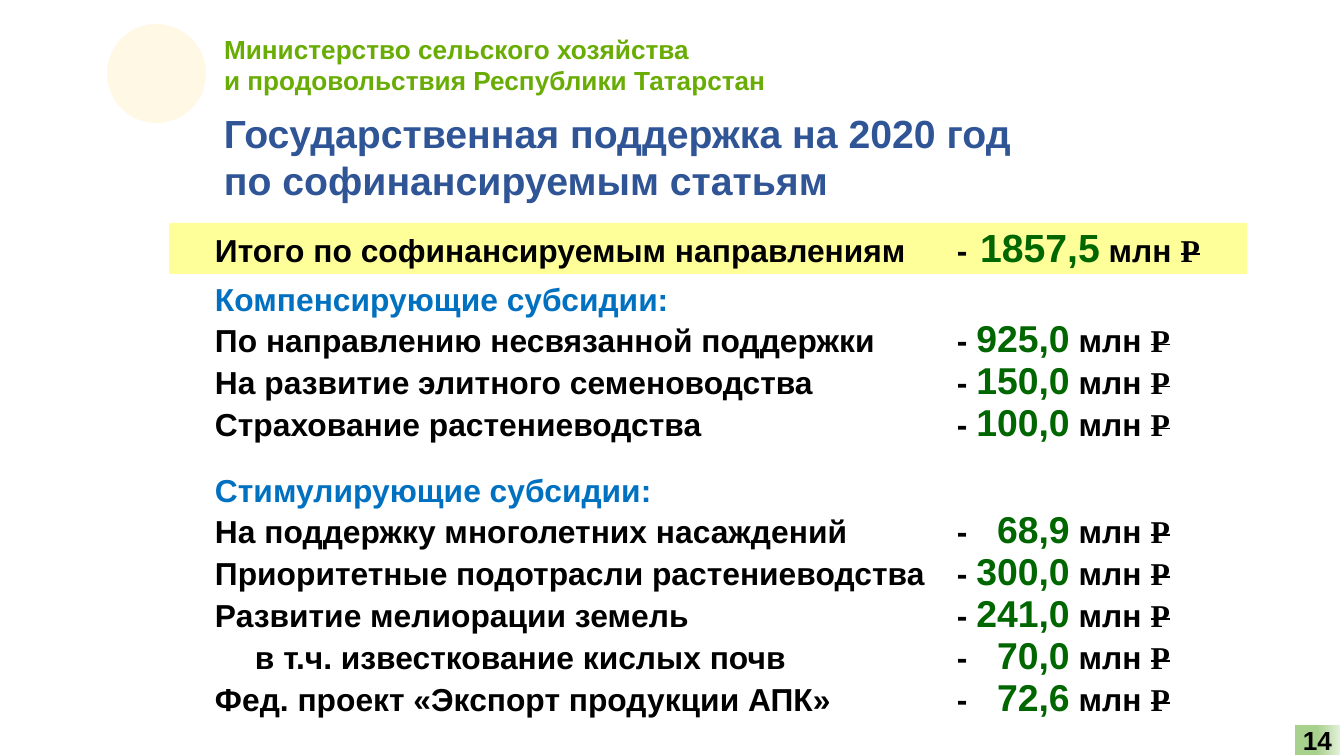
from dataclasses import dataclass

from lxml import etree
from pptx import Presentation
from pptx.dml.color import RGBColor
from pptx.enum.shapes import MSO_SHAPE
from pptx.enum.text import MSO_ANCHOR, MSO_AUTO_SIZE, PP_ALIGN
from pptx.oxml.ns import qn
from pptx.util import Emu, Pt

EMU_PER_PX = 914400 / 134.4
TITLE_ONLY = 5
OVAL, BAR, BADGE = MSO_SHAPE.OVAL, MSO_SHAPE.RECTANGLE, MSO_SHAPE.ROUNDED_RECTANGLE
TOP, MIDDLE = MSO_ANCHOR.TOP, MSO_ANCHOR.MIDDLE
LEFT, CENTER = PP_ALIGN.LEFT, PP_ALIGN.CENTER
NO_AUTOFIT = MSO_AUTO_SIZE.NONE


@dataclass(frozen=True)
class Theme:
    font: str = "Arial"
    rouble_font: str = "Times New Roman"
    ministry: str = "68AC04"
    title: str = "2F5597"
    heading: str = "0070C0"
    text: str = "000000"
    amount: str = "006600"
    emblem: str = "FFF8E5"
    total_bar: str = "FFFF99"
    badge_dark: str = "A9D18E"
    badge_light: str = "E2F0D9"
    small_size: float = 14
    text_size: float = 17
    amount_size: float = 20
    title_size: float = 21


THEME = Theme()

DASH_TAB, AMOUNT_TAB, TOTAL_TAB, SUB_ITEM_TAB = 742, 955, 985, 40

MINISTRY = ["Министерство сельского хозяйства",
            "и продовольствия Республики Татарстан"]
TITLE = ["Государственная поддержка на 2020 год",
         "по софинансируемым статьям"]
TOTAL = ("Итого по софинансируемым направлениям", "1857,5")
SUBSIDIES = [
    ("Компенсирующие субсидии:", [
        ("По направлению несвязанной поддержки", "925,0"),
        ("На развитие элитного семеноводства", "150,0"),
        ("Страхование растениеводства", "100,0"),
    ]),
    ("Стимулирующие субсидии:", [
        ("На поддержку многолетних насаждений", "68,9"),
        ("Приоритетные подотрасли растениеводства", "300,0"),
        ("Развитие мелиорации земель", "241,0"),
        ("\tв т.ч. известкование кислых почв", "70,0"),
        ("Фед. проект «Экспорт продукции АПК»", "72,6"),
    ]),
]


def px(length):
    return Emu(round(length * EMU_PER_PX))


def apply(target, values):
    for name, value in values.items():
        setattr(target, name, value)


def set_frame(frame, insets=(9, 0, 9, 0), anchor=TOP, wrap=True):
    """Format a text frame; insets run left, top, right, bottom."""
    left, top, right, bottom = map(px, insets)
    apply(frame, {"margin_left": left, "margin_top": top, "margin_right": right,
                  "margin_bottom": bottom, "vertical_anchor": anchor,
                  "word_wrap": wrap, "auto_size": NO_AUTOFIT})
    return frame


def next_paragraph(frame):
    first = frame.paragraphs[0]
    return first if not first.runs else frame.add_paragraph()


def add_run(paragraph, text, color, size, font=THEME.font):
    run = paragraph.add_run()
    run.text = text
    apply(run.font, {"name": font, "size": Pt(size), "bold": True})
    run.font.color.rgb = RGBColor.from_string(color)
    return run


def add_lines(frame, lines, color, size, **spacing):
    for line in lines:
        paragraph = next_paragraph(frame)
        apply(paragraph, {"alignment": LEFT, **spacing})
        add_run(paragraph, line, color, size)


def add_tabs(paragraph, stops):
    tab_list = etree.SubElement(paragraph._p.get_or_add_pPr(), qn("a:tabLst"))
    for position, side in stops:
        etree.SubElement(tab_list, qn("a:tab"), pos=str(px(position)), algn=side)


def add_amount_row(frame, label, amount, size, amount_tab, **spacing):
    """Add a label, a dash and a right-aligned amount in roubles."""
    paragraph = next_paragraph(frame)
    apply(paragraph, {"alignment": LEFT, **spacing})
    stops = [(DASH_TAB, "l"), (amount_tab, "r")]
    if label.startswith("\t"):
        stops.insert(0, (SUB_ITEM_TAB, "l"))
    add_tabs(paragraph, stops)
    add_run(paragraph, f"{label}\t-\t", THEME.text, THEME.text_size)
    add_run(paragraph, amount, THEME.amount, size)
    add_run(paragraph, " млн ", THEME.text, THEME.text_size)
    rouble = add_run(paragraph, "Р", THEME.text, THEME.text_size, THEME.rouble_font)
    rouble._r.get_or_add_rPr().set("strike", "sngStrike")


def add_shape(slide, kind, box, color=None):
    shape = slide.shapes.add_shape(kind, *map(px, box))
    shape.shadow.inherit = False
    shape.line.fill.background()
    if color:
        shape.fill.solid()
        shape.fill.fore_color.rgb = RGBColor.from_string(color)
    return shape


def add_text_box(slide, box, **frame_format):
    return set_frame(slide.shapes.add_textbox(*map(px, box)).text_frame, **frame_format)


def add_header(slide):
    add_shape(slide, OVAL, (107, 24, 99, 99), THEME.emblem)
    ministry = add_text_box(slide, (211, 27, 571, 78), insets=(13, 7, 13, 7), wrap=False)
    add_lines(ministry, MINISTRY, THEME.ministry, THEME.small_size, line_spacing=Pt(16.5))

    title = slide.shapes.title
    apply(title, dict(zip(("left", "top", "width", "height"),
                          map(px, (215, 109, 1064, 94)))))
    add_lines(set_frame(title.text_frame, anchor=MIDDLE), TITLE,
              THEME.title, THEME.title_size, space_before=Pt(0))


def add_total(slide):
    bar = add_shape(slide, BAR, (169, 223, 1078, 51), THEME.total_bar)
    frame = set_frame(bar.text_frame, insets=(46, 0, 9, 4))
    add_amount_row(frame, *TOTAL, THEME.title_size, TOTAL_TAB)


def add_subsidies(slide):
    frame = add_text_box(slide, (206, 274, 1025, 462), insets=(9, 5, 9, 5))
    row_spacing = {"line_spacing": Pt(21), "space_after": Pt(1.5)}
    for index, (heading, rows) in enumerate(SUBSIDIES):
        group_gap = Pt(12 if index else 0)
        add_lines(frame, [heading], THEME.heading, THEME.text_size,
                  space_before=group_gap, **row_spacing)
        for label, amount in rows:
            add_amount_row(frame, label, amount, THEME.amount_size,
                           AMOUNT_TAB, **row_spacing)


def add_page_number(slide, number):
    badge = add_shape(slide, BADGE, (1295, 725, 45, 30))
    badge.adjustments[0] = 0
    badge.fill.gradient()
    badge.fill.gradient_angle = 0
    stops = ((0.5, THEME.badge_dark), (1, THEME.badge_light))
    for stop, (position, color) in zip(badge.fill.gradient_stops, stops):
        stop.position = position
        stop.color.rgb = RGBColor.from_string(color)
    frame = set_frame(badge.text_frame, insets=(0, 5, 0, 5), anchor=MIDDLE)
    add_lines(frame, [number], THEME.text, THEME.small_size, alignment=CENTER)


def main():
    deck = Presentation()
    apply(deck, {"slide_width": px(1344), "slide_height": px(756)})
    slide = deck.slides.add_slide(deck.slide_layouts[TITLE_ONLY])
    add_header(slide)
    add_total(slide)
    add_subsidies(slide)
    add_page_number(slide, "14")
    deck.save("out.pptx")


if __name__ == "__main__":
    main()
